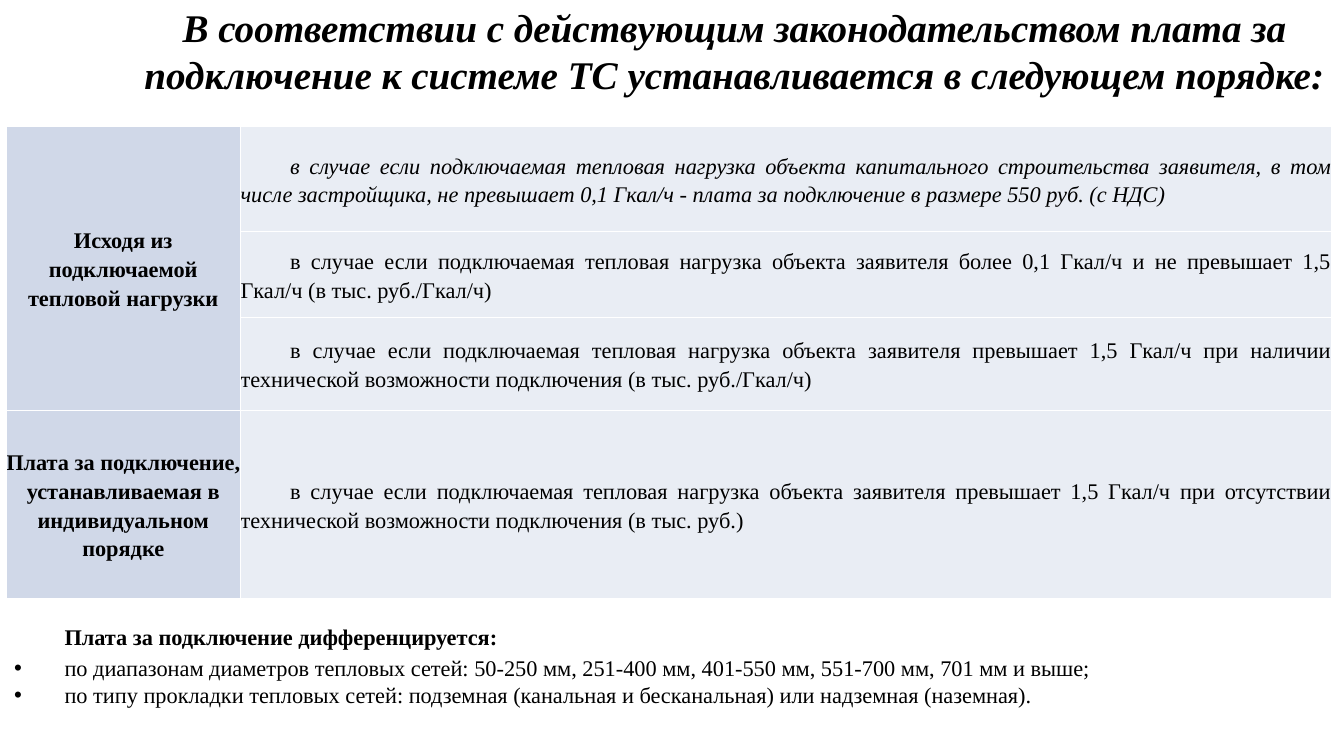
import pptx
import pptx.util
import pptx.dml.color
import pptx.enum.text
import pptx.oxml.ns
import lxml.etree

Cm = pptx.util.Cm
Pt = pptx.util.Pt
ALIGN = pptx.enum.text.PP_ALIGN
MIDDLE = pptx.enum.text.MSO_ANCHOR.MIDDLE
qn = pptx.oxml.ns.qn
COLORS = {"text": "000000", "basis": "D0D8E8", "condition": "E9EDF4", "border": "FFFFFF"}


def write(paragraph, text, size=16, bold=False, italic=False, align=ALIGN.LEFT,
          spacing=1.0, before=0, margin=0, indent=0, bullet=None):
    properties = paragraph._p.get_or_add_pPr()
    properties.set("marL", str(Cm(margin)))
    properties.set("indent", str(Cm(indent)))
    if bullet:
        lxml.etree.SubElement(properties, qn("a:buFont")).set("typeface", "Arial")
        lxml.etree.SubElement(properties, qn("a:buChar")).set("char", bullet)
    paragraph.alignment = align
    paragraph.line_spacing = spacing
    paragraph.space_before = Pt(before)
    run = paragraph.add_run()
    run.text = text
    run.font.name = "Times New Roman"
    run.font.size = Pt(size)
    run.font.bold = bold
    run.font.italic = italic
    run.font.color.rgb = pptx.dml.color.RGBColor.from_string(COLORS["text"])


def add_frame(left, top, width, height):
    frame = slide.shapes.add_textbox(Cm(left), Cm(top), Cm(width), Cm(height)).text_frame
    frame.word_wrap = True
    frame.margin_left = frame.margin_right = Cm(0.13)
    frame.margin_top = frame.margin_bottom = Cm(0.13)
    return frame


presentation = pptx.Presentation()
presentation.slide_width = Cm(33.91)
presentation.slide_height = Cm(19.05)
slide = presentation.slides.add_slide(presentation.slide_layouts[6])

title = add_frame(3.15, -0.05, 30.76, 2.46)
write(title.paragraphs[0],
      "В соответствии с действующим законодательством плата за подключение "
      "к системе ТС устанавливается в следующем порядке:",
      size=28, bold=True, italic=True, align=ALIGN.CENTER)

fee_rules = [
    ("Исходя из подключаемой тепловой нагрузки",
     "в случае если подключаемая тепловая нагрузка объекта капитального строительства заявителя, "
     "в том числе застройщика, не превышает 0,1 Гкал/ч - плата за подключение "
     "в размере 550 руб. (с НДС)", 2.67),
    ("",
     "в случае если подключаемая тепловая нагрузка объекта заявителя более 0,1 Гкал/ч "
     "и не превышает 1,5 Гкал/ч (в тыс. руб./Гкал/ч)", 2.16),
    ("",
     "в случае если подключаемая тепловая нагрузка объекта заявителя превышает 1,5 Гкал/ч "
     "при наличии технической возможности подключения (в тыс. руб./Гкал/ч)", 2.34),
    ("Плата за подключение, устанавливаемая в индивидуальном порядке",
     "в случае если подключаемая тепловая нагрузка объекта заявителя превышает 1,5 Гкал/ч "
     "при отсутствии технической возможности подключения (в тыс. руб.)", 4.75),
]
fees = slide.shapes.add_table(4, 2, Cm(0.15), Cm(3.18), Cm(33.45), Cm(11.92)).table
fees.first_row = False
fees.horz_banding = False
fees.columns[0].width = Cm(5.92)
fees.columns[1].width = Cm(27.53)
fees.cell(0, 0).merge(fees.cell(2, 0))

for row, (basis, condition, height) in enumerate(fee_rules):
    fees.rows[row].height = Cm(height)
    for column, fill in enumerate(("basis", "condition")):
        cell = fees.cell(row, column)
        cell.margin_left = cell.margin_right = cell.margin_top = cell.margin_bottom = 0
        cell.vertical_anchor = MIDDLE
        cell_properties = cell._tc.get_or_add_tcPr()
        for side in ("lnL", "lnR", "lnT", "lnB"):
            border = lxml.etree.SubElement(cell_properties, qn("a:" + side), w=str(Pt(1)))
            border_fill = lxml.etree.SubElement(border, qn("a:solidFill"))
            lxml.etree.SubElement(border_fill, qn("a:srgbClr"), val=COLORS["border"])
        cell.fill.solid()
        cell.fill.fore_color.rgb = pptx.dml.color.RGBColor.from_string(COLORS[fill])
    if basis:
        write(fees.cell(row, 0).text_frame.paragraphs[0], basis,
              bold=True, align=ALIGN.CENTER, spacing=1.15)
    write(fees.cell(row, 1).text_frame.paragraphs[0], condition,
          italic=row == 0, align=ALIGN.JUSTIFY, spacing=1.15, indent=1.25)

differentiation = add_frame(0.23, 15.6, 33.68, 2.2)
write(differentiation.paragraphs[0], "Плата за подключение дифференцируется:",
      bold=True, indent=1.27)
criteria = [
    ("по диапазонам диаметров тепловых сетей: 50-250 мм, 251-400 мм, 401-550 мм, "
     "551-700 мм, 701 мм и выше;", ALIGN.JUSTIFY, 1.15),
    ("по типу прокладки тепловых сетей: подземная (канальная и бесканальная) "
     "или надземная (наземная).", ALIGN.LEFT, 1.0),
]
for criterion, align, spacing in criteria:
    write(differentiation.add_paragraph(), criterion, align=align, spacing=spacing,
          margin=1.27, indent=-1.27, bullet="•")

presentation.save("out.pptx")
